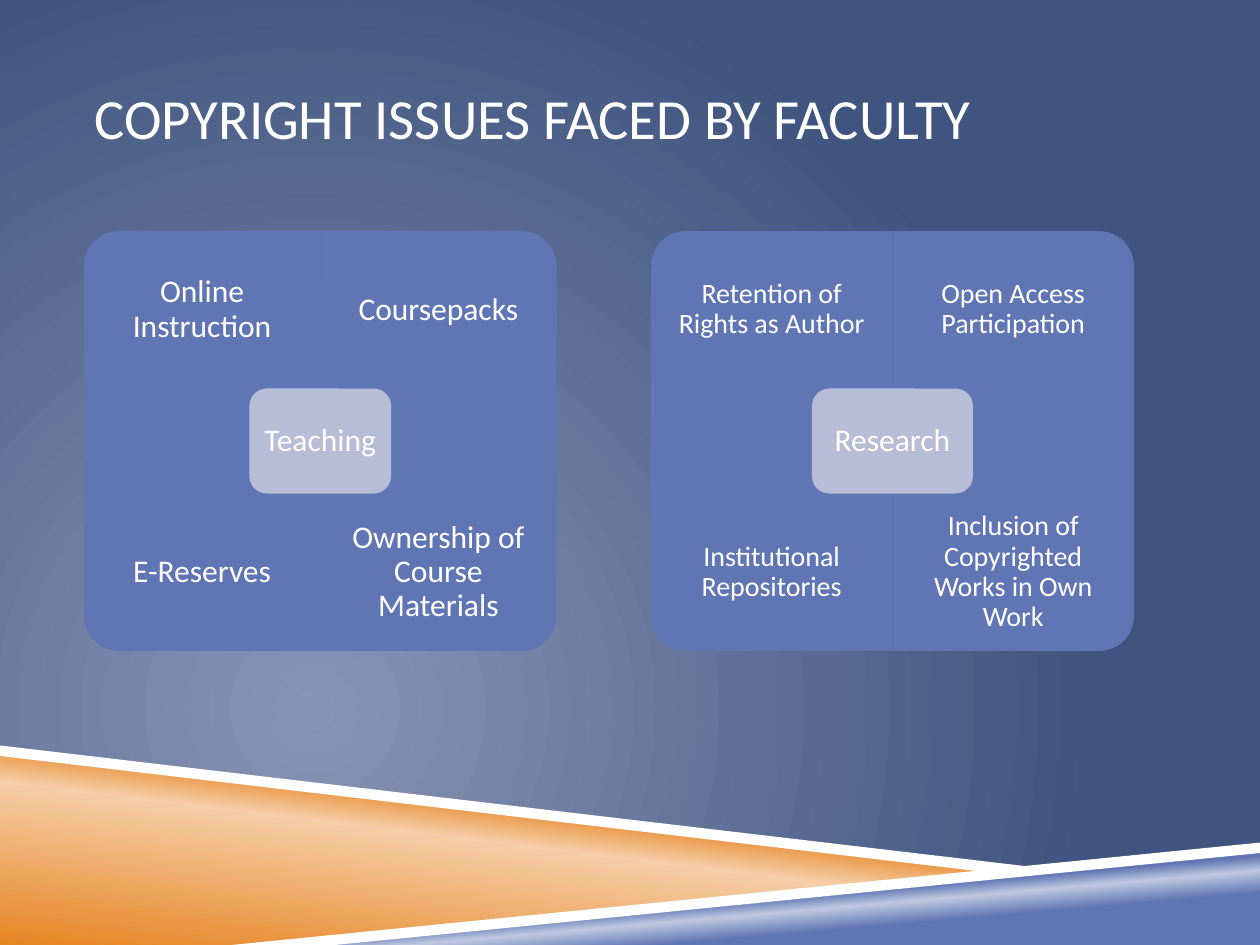
from pptx import Presentation
from pptx.dml.color import RGBColor
from pptx.enum.shapes import MSO_SHAPE as Preset
from pptx.enum.text import MSO_ANCHOR as Anchor, PP_ALIGN as Align
from pptx.oxml import parse_xml
from pptx.oxml.ns import nsdecls, qn
from pptx.util import Pt

COLORS = {"white": "FFFFFF", "blue": "6076B4", "pale blue": "BFC8E1", "hub": "B7BDD6",
          "orange": "E68422", "pale orange": "F5CEA7", "glow": "8894B5", "navy": "3F547E"}
QUADRANTS = [(0, 0, 270), (1, 0, 0), (0, 1, 180), (1, 1, 90)]
PANELS = [
    {"hub": "Teaching", "left": 48, "width": 135, "hub_width": 81, "size": 18, "inset": 10.08,
     "topics": ["Online Instruction", "Coursepacks", "E-Reserves", "Ownership of Course Materials"]},
    {"hub": "Research", "left": 372, "width": 138, "hub_width": 92, "size": 16, "inset": 8.96,
     "topics": ["Retention of Rights as Author", "Open Access Participation",
                "Institutional Repositories", "Inclusion of Copyrighted Works in Own Work"]},
]
BLUE_BAND = [(28, "blue"), (40, "pale blue"), (48, "blue")]
ORANGE_BAND = [(0, "orange"), (52, "pale orange"), (66, "orange")]
PANEL_TOP, QUADRANT_HEIGHT, TOPIC_HEIGHT, HUB_HEIGHT, HUB_MARGIN = 132, 120, 90, 60, 3


def apply(target, formats):
    for name, value in formats.items():
        setattr(target, name, value)


class SlideBuilder:
    """Hold the style and current slide, and draw each kind of element."""

    font = "Calibri"

    def __init__(self, presentation):
        self.slide = presentation.slides.add_slide(presentation.slide_layouts[6])

    def color(self, name):
        return RGBColor.from_string(COLORS[name])

    def gradient(self, fill, element, stops, direction):
        fill.solid()
        stop_xml = "".join(
            f'<a:gs pos="{position * 1000}"><a:srgbClr val="{COLORS[name]}"/></a:gs>'
            for position, name in stops)
        solid = element.find(qn("a:solidFill"))
        element.replace(solid, parse_xml(
            f'<a:gradFill {nsdecls("a")} rotWithShape="1"><a:gsLst>{stop_xml}</a:gsLst>'
            f'{direction}</a:gradFill>'))

    def background(self, stops):
        background = self.slide.background
        background.fill.solid()
        properties = self.slide.element.cSld.find(qn("p:bg")).find(qn("p:bgPr"))
        self.gradient(background.fill, properties, stops,
                      '<a:path path="circle"><a:fillToRect l="50000" t="100000" '
                      'r="100000" b="50000"/></a:path>')

    def finish(self, shape, color):
        shape.shadow.inherit = False
        shape.line.fill.background()
        shape.fill.solid()
        shape.fill.fore_color.rgb = self.color(color)

    def band(self, points, color="white", stops=None, angle=0):
        start, *others = [(Pt(x), Pt(y)) for x, y in points]
        builder = self.slide.shapes.build_freeform(*start)
        builder.add_line_segments(others, close=True)
        shape = builder.convert_to_shape()
        self.finish(shape, color)
        if stops:
            self.gradient(shape.fill, shape.element.spPr, stops,
                          f'<a:lin ang="{angle * 60000}" scaled="0"/>')

    def block(self, shapes, preset, box, color, rotation=0):
        left, top, width, height = box
        if rotation % 180:
            left, top = left + (width - height) / 2, top + (height - width) / 2
            width, height = height, width
        shape = shapes.add_shape(preset, *map(Pt, (left, top, width, height)))
        shape.rotation = rotation
        self.finish(shape, color)

    def text(self, shapes, text, box, size, insets, alignment=Align.CENTER, spacing=0.9):
        frame = shapes.add_textbox(*map(Pt, box)).text_frame
        horizontal, vertical = map(Pt, insets)
        apply(frame, {"word_wrap": True, "vertical_anchor": Anchor.MIDDLE,
                      "margin_left": horizontal, "margin_right": horizontal,
                      "margin_top": vertical, "margin_bottom": vertical})
        paragraph = frame.paragraphs[0]
        apply(paragraph, {"alignment": alignment, "line_spacing": spacing})
        run = paragraph.add_run()
        run.text = text
        apply(run.font, {"name": self.font, "size": Pt(size)})
        run.font.color.rgb = self.color("white")

    def panel(self, hub, left, width, hub_width, size, inset, topics):
        shapes = self.slide.shapes.add_group_shape().shapes
        for topic, (column, row, rotation) in zip(topics, QUADRANTS):
            x, y = left + column * width, PANEL_TOP + row * QUADRANT_HEIGHT
            self.block(shapes, Preset.ROUND_1_RECTANGLE,
                       (x, y, width, QUADRANT_HEIGHT), "blue", rotation)
            topic_top = y + row * (QUADRANT_HEIGHT - TOPIC_HEIGHT)
            self.text(shapes, topic, (x, topic_top, width, TOPIC_HEIGHT), size, (inset, inset))
        x = left + width - hub_width / 2
        y = PANEL_TOP + QUADRANT_HEIGHT - HUB_HEIGHT / 2
        self.block(shapes, Preset.ROUNDED_RECTANGLE, (x, y, hub_width, HUB_HEIGHT), "hub")
        self.text(shapes, hub, (x + HUB_MARGIN, y + HUB_MARGIN, hub_width - 2 * HUB_MARGIN,
                                HUB_HEIGHT - 2 * HUB_MARGIN), 18, (5.04, 5.04))


def main():
    presentation = Presentation()
    apply(presentation, {"slide_width": Pt(720), "slide_height": Pt(540)})
    builder = SlideBuilder(presentation)
    builder.background([(0, "glow"), (100, "navy")])
    builder.band([(142.5, 540), (720, 484), (720, 540)], stops=BLUE_BAND, angle=265)
    builder.band([(0, 430), (570, 498), (144, 540), (0, 540)], stops=ORANGE_BAND, angle=277)
    builder.band([(0, 426), (0, 432), (569, 499), (599, 496.5)])
    builder.band([(720, 481.5), (132.5, 540), (191.5, 540), (720, 487.5)])
    builder.text(builder.slide.shapes, "COPYRIGHT ISSUES FACED BY FACULTY",
                 (54, 21.6, 612, 90), 32.4, (0, 3.6), Align.LEFT, 1.0)
    for panel in PANELS:
        builder.panel(**panel)
    presentation.save("out.pptx")


if __name__ == "__main__":
    main()
